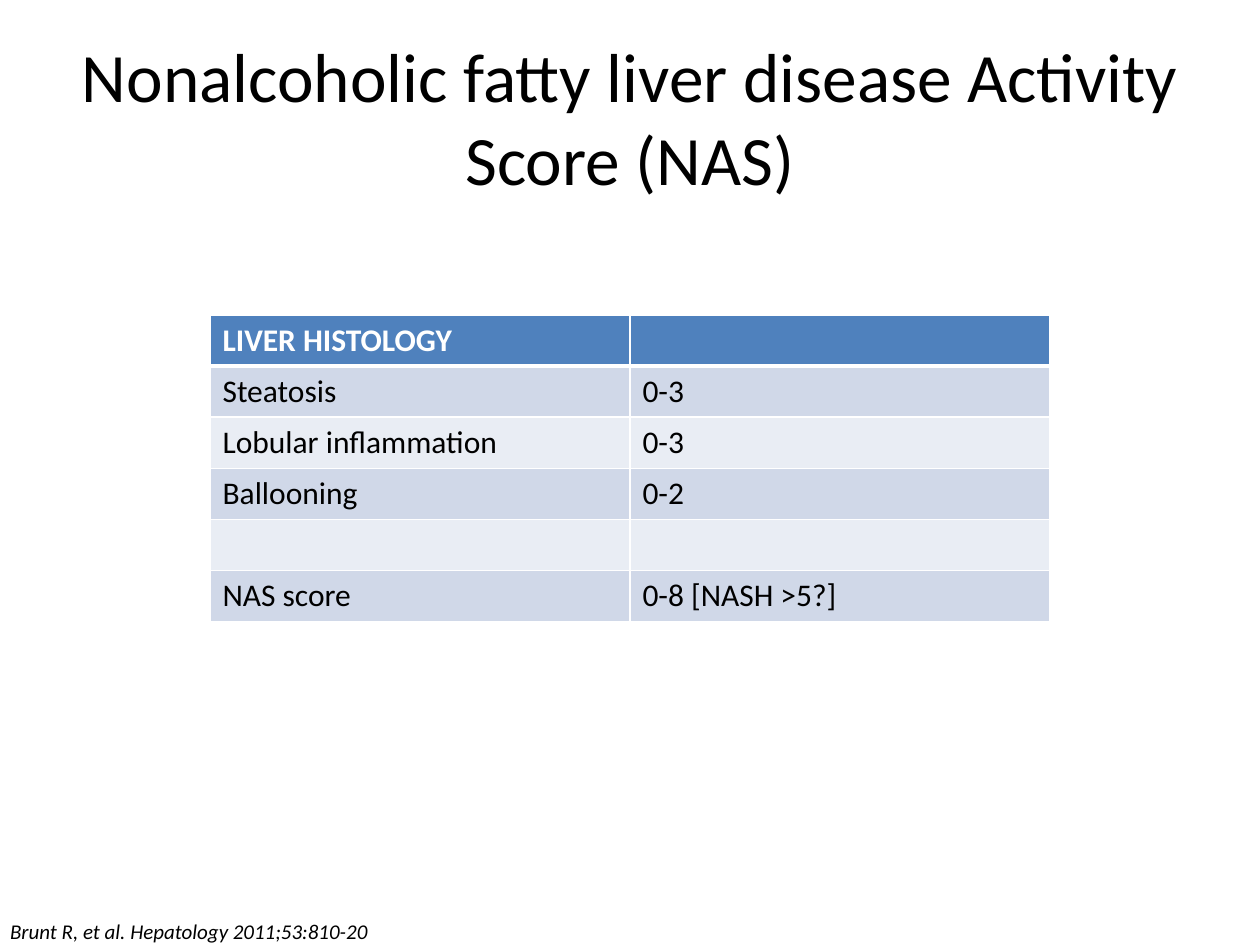
import pptx
import pptx.dml.color
import pptx.enum.text
import pptx.oxml.ns
import pptx.util
from lxml import etree

WIDTH, HEIGHT = 10, 7.5
FONT = "Calibri"
COLORS = {
    "text": "000000",
    "line": "FFFFFF",
    "header": "4F81BD",
    "odd": "D0D8E8",
    "even": "E9EDF4",
}
SCORES = [
    ("LIVER HISTOLOGY", ""),
    ("Steatosis", "0-3"),
    ("Lobular inflammation", "0-3"),
    ("Ballooning", "0-2"),
    ("", ""),
    ("NAS score", "0-8 [NASH >5?]"),
]
ROW_HEIGHT = 0.405
ALIGN = pptx.enum.text.PP_ALIGN
MIDDLE = pptx.enum.text.MSO_ANCHOR.MIDDLE


def rgb(name):
    return pptx.dml.color.RGBColor.from_string(COLORS[name])


def box(left, top, width, height):
    """Turn shares of the slide's size into lengths."""
    return [pptx.util.Inches(share * side) for share, side in
            zip((left, top, width, height), (WIDTH, HEIGHT) * 2)]


def write(frame, text, size=18, color="text", bold=False, italic=False,
          align=ALIGN.LEFT):
    paragraph = frame.paragraphs[0]
    paragraph.alignment = align
    paragraph.font.size = pptx.util.Pt(size)
    if not text:
        return
    run = paragraph.add_run()
    run.text = text
    run.font.name = FONT
    run.font.size = pptx.util.Pt(size)
    run.font.bold = bold
    run.font.italic = italic
    run.font.color.rgb = rgb(color)


def set_title(slide, text):
    title = slide.shapes.title
    title.left, title.top, title.width, title.height = box(0.05, 0.04, 0.9, 1 / 6)
    title.text_frame.word_wrap = True
    title.text_frame.vertical_anchor = MIDDLE
    write(title.text_frame, text, size=39.6, align=ALIGN.CENTER)


def set_borders(cell, **widths):
    """Draw cell borders, given in points by side: L, R, T, B."""
    properties = cell._tc.get_or_add_tcPr()
    for side, width in widths.items():
        line = etree.SubElement(properties, pptx.oxml.ns.qn(f"a:ln{side}"),
                                w=str(pptx.util.Pt(width)))
        fill = etree.SubElement(line, pptx.oxml.ns.qn("a:solidFill"))
        etree.SubElement(fill, pptx.oxml.ns.qn("a:srgbClr"), val=COLORS["line"])


def add_score_table(slide, rows):
    area = box(1 / 6, 1 / 3, 2 / 3, len(rows) * ROW_HEIGHT / HEIGHT)
    table = slide.shapes.add_table(len(rows), len(rows[0]), *area).table
    for row_index, row in enumerate(rows):
        header = row_index == 0
        fill = "header" if header else ("even", "odd")[row_index % 2]
        for column_index, text in enumerate(row):
            cell = table.cell(row_index, column_index)
            set_borders(cell, L=1, R=1, T=3 if row_index == 1 else 1,
                        B=3 if header else 1)
            cell.fill.solid()
            cell.fill.fore_color.rgb = rgb(fill)
            write(cell.text_frame, text, bold=header,
                  color="line" if header else "text")


def add_citation(slide, text):
    frame = slide.shapes.add_textbox(*box(0, 0.97, 0.45, 0.03)).text_frame
    frame.word_wrap = True
    frame.vertical_anchor = MIDDLE
    frame.margin_left = pptx.util.Inches(0.08)
    frame.margin_top = frame.margin_bottom = 0
    write(frame, text, size=12, italic=True)


def main():
    presentation = pptx.Presentation()
    presentation.slide_width = pptx.util.Inches(WIDTH)
    presentation.slide_height = pptx.util.Inches(HEIGHT)
    slide = presentation.slides.add_slide(presentation.slide_layouts[5])
    set_title(slide, "Nonalcoholic fatty liver disease Activity Score (NAS)")
    add_score_table(slide, SCORES)
    add_citation(slide, "Brunt R, et al. Hepatology 2011;53:810-20")
    presentation.save("out.pptx")


if __name__ == "__main__":
    main()
